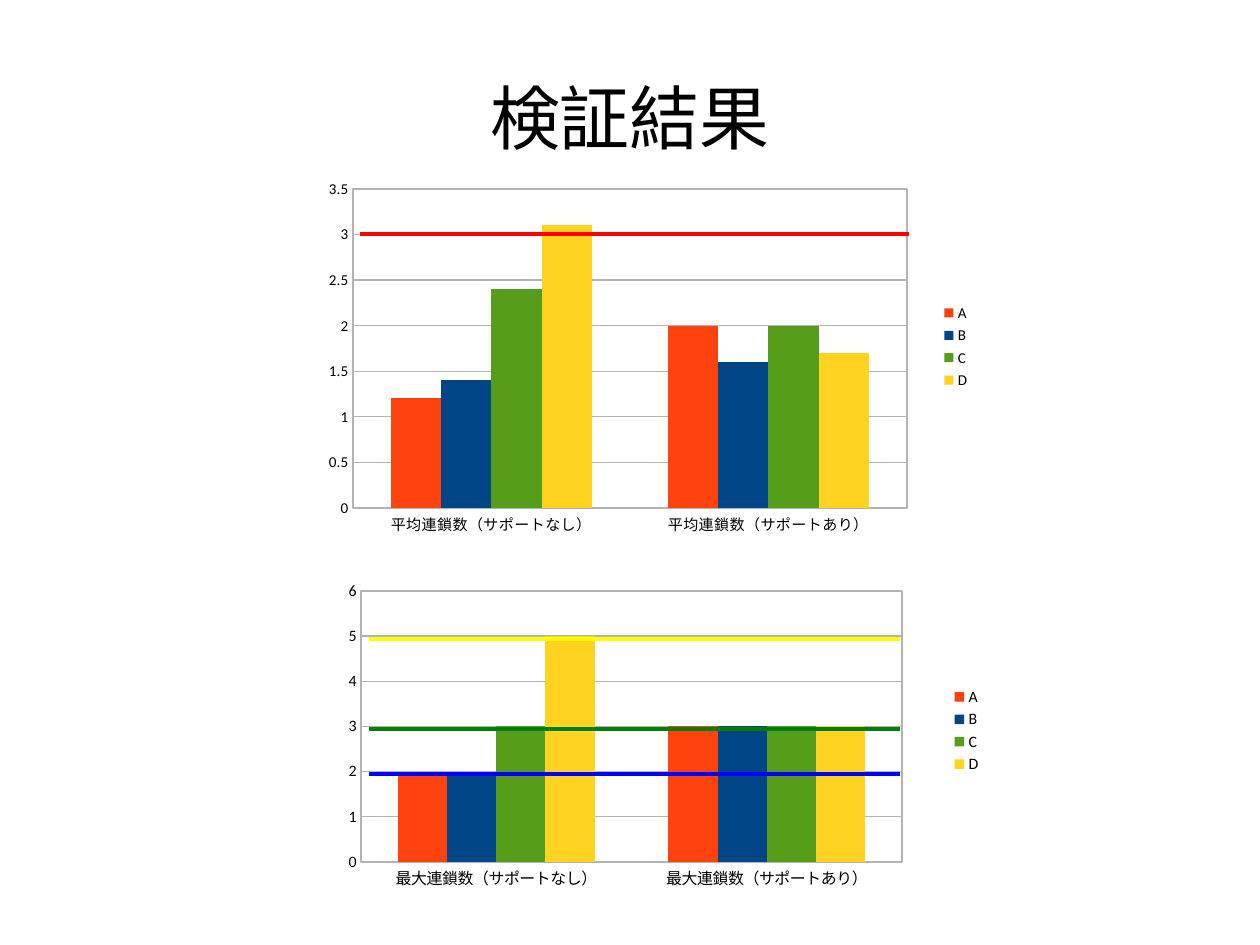
"""Build the 検証結果 slide: two column charts with threshold lines."""
import dataclasses

import pptx
import pptx.chart.data
import pptx.dml.color
import pptx.enum.chart
import pptx.enum.shapes
import pptx.enum.text
import pptx.oxml
import pptx.oxml.ns
import pptx.util

PX = 8000


@dataclasses.dataclass(frozen=True)
class Theme:
    text: str = "000000"
    axis: str = "B3B3B3"
    series: tuple = ("FF420E", "004586", "579D1C", "FFD320")
    average: str = "FF0000"
    levels: tuple = ("0000FF", "008000", "FFFF00")
    title_font: str = "Arial"
    chart_font: str = "Calibri"
    title_size: float = 44
    average_size: float = 9.5
    maximum_size: float = 10
    axis_width: float = 0.75
    line_width: float = 2.83


def rgb(value):
    return pptx.dml.color.RGBColor.from_string(value)


def px(*values):
    return [pptx.util.Emu(v * PX) for v in values]


def apply(target, values):
    for name, value in values.items():
        setattr(target, name, value)


class Board:
    def __init__(self, prs, theme):
        self.theme = theme
        self.s = prs.slides.add_slide(prs.slide_layouts[6])

    def font(self, font, name, size):
        apply(font, {"name": name, "size": pptx.util.Pt(size)})
        font.color.rgb = rgb(self.theme.text)

    def stroke(self, line, color, width):
        line.color.rgb = rgb(color)
        line.width = pptx.util.Pt(width)

    def title(self, text, box):
        sp = self.s.shapes.add_textbox(*px(*box))
        tf = sp.text_frame
        apply(tf, {
            "word_wrap": True,
            "vertical_anchor": pptx.enum.text.MSO_ANCHOR.MIDDLE,
            "margin_left": 0, "margin_right": 0,
            "margin_top": 0, "margin_bottom": 0,
        })
        p = tf.paragraphs[0]
        p.alignment = pptx.enum.text.PP_ALIGN.CENTER
        r = p.add_run()
        r.text = text
        self.font(r.font, self.theme.title_font, self.theme.title_size)

    def line(self, x1, x2, y, color):
        kind = pptx.enum.shapes.MSO_CONNECTOR.STRAIGHT
        cxn = self.s.shapes.add_connector(kind, *px(x1, y, x2, y))
        self.stroke(cxn.line, color, self.theme.line_width)
        sp_pr = cxn.element.find(pptx.oxml.ns.qn("p:spPr"))
        sp_pr.append(sp_pr.makeelement(pptx.oxml.ns.qn("a:effectLst"), {}))

    def columns(self, box, plot, cats, series, top, step, size):
        data = pptx.chart.data.CategoryChartData()
        data.categories = cats
        for name, values in series.items():
            data.add_series(name, values)
        kind = pptx.enum.chart.XL_CHART_TYPE.COLUMN_CLUSTERED
        chart = self.s.shapes.add_chart(kind, *px(*box), data).chart
        apply(chart, {"has_title": False, "has_legend": True})
        apply(chart.legend, {
            "position": pptx.enum.chart.XL_LEGEND_POSITION.RIGHT,
            "include_in_layout": False,
        })
        apply(chart.plots[0], {"gap_width": 150, "overlap": 0, "vary_by_categories": False})
        for ser, color in zip(chart.plots[0].series, self.theme.series):
            ser.format.fill.solid()
            ser.format.fill.fore_color.rgb = rgb(color)
        apply(chart.value_axis, {
            "minimum_scale": 0, "maximum_scale": top,
            "major_unit": step, "has_major_gridlines": True,
        })
        none = pptx.enum.chart.XL_TICK_MARK.NONE
        for axis in (chart.category_axis, chart.value_axis):
            apply(axis, {"major_tick_mark": none, "minor_tick_mark": none})
            self.stroke(axis.format.line, self.theme.axis, self.theme.axis_width)
            self.font(axis.tick_labels.font, self.theme.chart_font, size)
        self.stroke(chart.value_axis.major_gridlines.format.line,
                    self.theme.axis, self.theme.axis_width)
        for font in (chart.font, chart.legend.font):
            self.font(font, self.theme.chart_font, size)
        self.frame(chart, box, plot)

    def frame(self, chart, box, plot):
        area = chart.element.find(".//" + pptx.oxml.ns.qn("c:plotArea"))
        for old in area.findall(pptx.oxml.ns.qn("c:layout")):
            area.remove(old)
        shares = {
            "x": (plot[0] - box[0]) / box[2], "y": (plot[1] - box[1]) / box[3],
            "w": plot[2] / box[2], "h": plot[3] / box[3],
        }
        modes = "".join(f'<c:{k}Mode val="edge"/>' for k in "xy")
        sizes = "".join(f'<c:{k} val="{v:.4f}"/>' for k, v in shares.items())
        ns = pptx.oxml.ns.nsdecls("c", "a")
        area.insert(0, pptx.oxml.parse_xml(
            f'<c:layout {ns}><c:manualLayout><c:layoutTarget val="inner"/>'
            f'{modes}{sizes}</c:manualLayout></c:layout>'))
        width = pptx.util.Pt(self.theme.axis_width)
        area.append(pptx.oxml.parse_xml(
            f'<c:spPr {ns}><a:noFill/><a:ln w="{width}"><a:solidFill>'
            f'<a:srgbClr val="{self.theme.axis}"/></a:solidFill></a:ln></c:spPr>'))


def main():
    theme = Theme()
    prs = pptx.Presentation()
    prs.slide_width, prs.slide_height = px(1260, 945)
    board = Board(prs, theme)
    board.title("検証結果", (63, 38, 1134, 158))
    board.columns(
        (295, 135, 687, 423), (353, 189, 554, 319),
        ("平均連鎖数（サポートなし）", "平均連鎖数（サポートあり）"),
        {"A": (1.2, 2), "B": (1.4, 1.6), "C": (2.4, 2), "D": (3.1, 1.7)},
        3.5, 0.5, theme.average_size)
    board.columns(
        (306, 549, 687, 363), (361, 591, 541, 271),
        ("最大連鎖数（サポートなし）", "最大連鎖数（サポートあり）"),
        {"A": (2, 3), "B": (2, 3), "C": (3, 3), "D": (5, 3)},
        6, 1, theme.maximum_size)
    board.line(360, 909, 234, theme.average)
    for level, color in zip((2, 3, 5), theme.levels):
        board.line(369, 900, 864 - 45 * level, color)
    prs.save("out.pptx")


if __name__ == "__main__":
    main()
